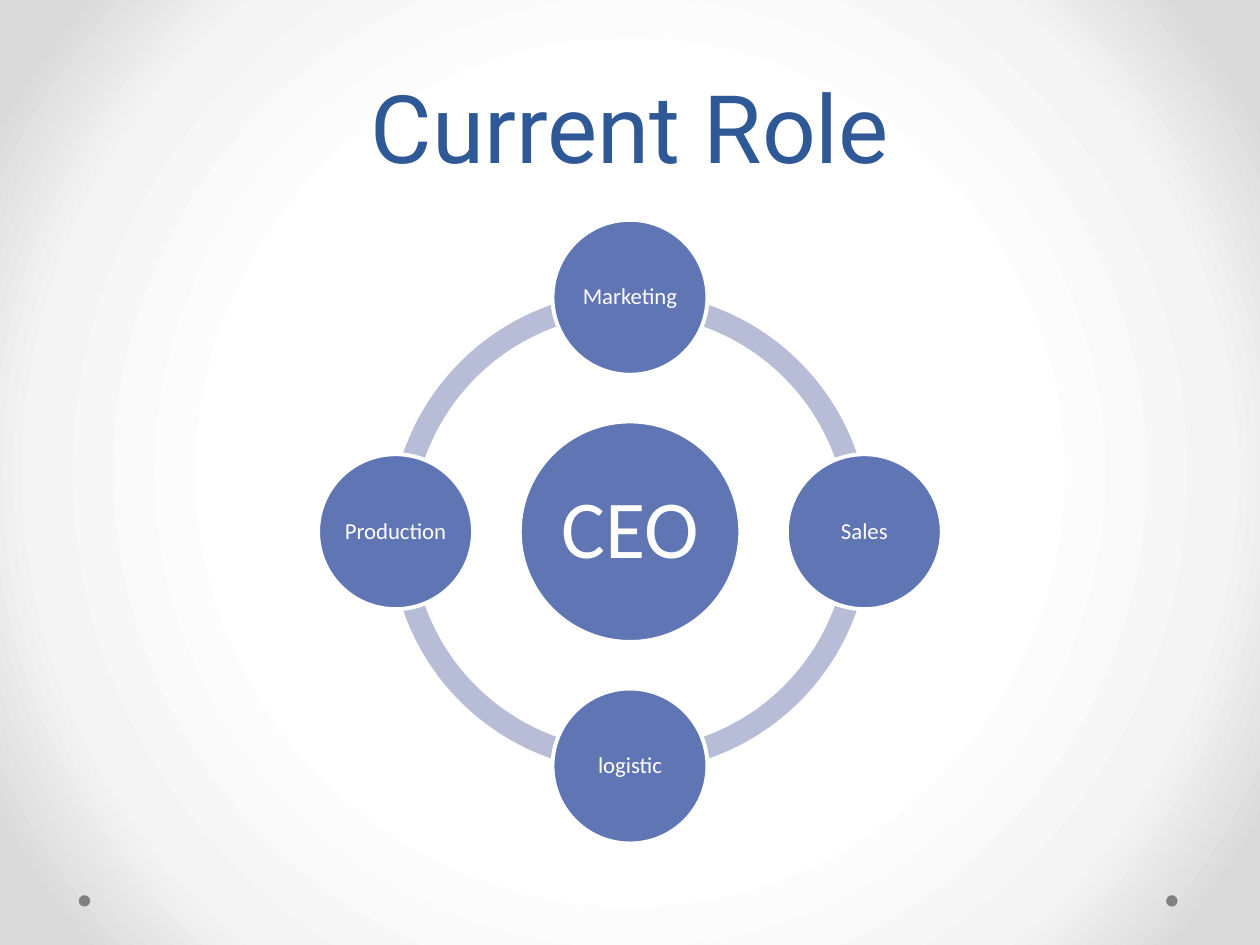
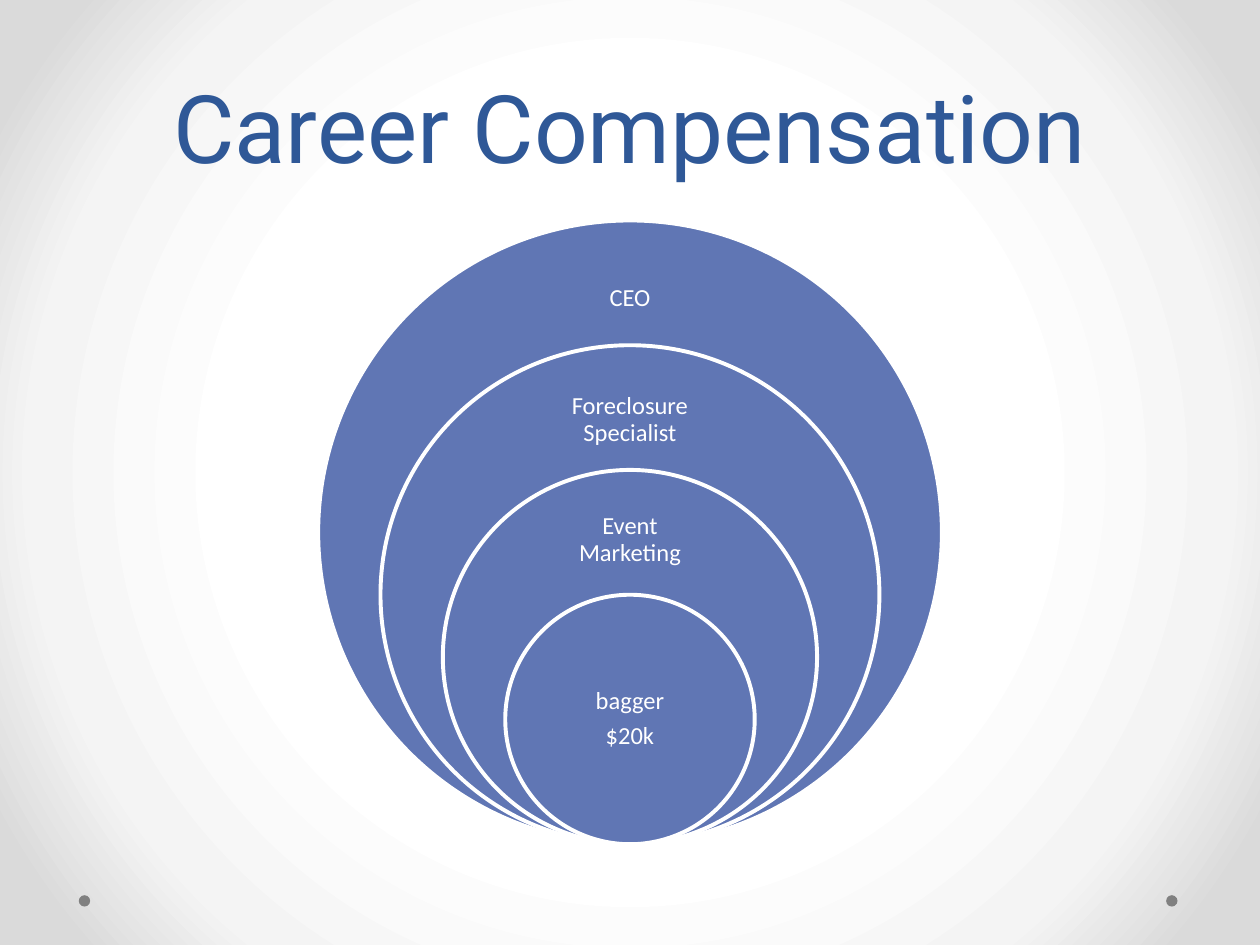
from dataclasses import dataclass
from math import cos, radians, sin

from lxml import etree
from pptx import Presentation
from pptx.dml.color import RGBColor
from pptx.enum.shapes import MSO_SHAPE
from pptx.enum.text import MSO_ANCHOR, PP_ALIGN
from pptx.oxml.ns import qn
from pptx.util import Inches, Pt

ELLIPSE, BLOCK_ARC = MSO_SHAPE.OVAL, MSO_SHAPE.BLOCK_ARC
CENTER = PP_ALIGN.CENTER
MIDDLE, BOTTOM = MSO_ANCHOR.MIDDLE, MSO_ANCHOR.BOTTOM


@dataclass(frozen=True)
class Theme:
    title_color: str = "2F5897"
    circle: str = "6076B4"
    arc: str = "B7BDD6"
    dot: str = "808080"
    white: str = "FFFFFF"
    backdrop: tuple = ((50, "FFFFFF"), (76, "F4F4F4"), (92, "DADADA"))
    title_font: str = "Roboto"
    body_font: str = "Calibri"
    title_size: int = 54
    title_leading: int = 58
    hub_size: int = 47
    role_size: int = 13
    level_size: int = 14
    outline: float = 2.25


THEME = Theme()

# Both diagrams fill the same round area
CENTER_X, CENTER_Y = 5, 4.22
DIAGRAM_SIZE = 4.95
DIAGRAM_BOTTOM = 6.7


def paint_backdrop(slide):
    """Radial gradient from the white middle to grey corners."""
    slide.background.fill.gradient()
    gradient = next(slide.element.iter(qn("a:gradFill")))
    for child in list(gradient):
        gradient.remove(child)
    stops = etree.SubElement(gradient, qn("a:gsLst"))
    for percent, color in THEME.backdrop:
        stop = etree.SubElement(stops, qn("a:gs"), pos=str(percent * 1000))
        etree.SubElement(stop, qn("a:srgbClr"), val=color)
    circle = etree.SubElement(gradient, qn("a:path"), {"path": "circle"})
    etree.SubElement(circle, qn("a:fillToRect"),
                     {side: "50000" for side in "ltrb"})


def add_round(slide, kind, center_x, center_y, size, color, outlined=False):
    """Shape with equal sides, placed by its centre."""
    shape = slide.shapes.add_shape(
        kind, Inches(center_x - size / 2), Inches(center_y - size / 2),
        Inches(size), Inches(size))
    shape.shadow.inherit = False
    shape.fill.solid()
    shape.fill.fore_color.rgb = RGBColor.from_string(color)
    if outlined:
        shape.line.color.rgb = RGBColor.from_string(THEME.white)
        shape.line.width = Pt(THEME.outline)
    else:
        shape.line.fill.background()
    return shape


def add_circle(slide, center_x, center_y, size):
    return add_round(slide, ELLIPSE, center_x, center_y, size,
                     THEME.circle, outlined=True)


def write(shape, text, size, inset):
    """Centred white label; each line of text is a paragraph."""
    frame = shape.text_frame
    frame.word_wrap = True
    frame.vertical_anchor = MIDDLE
    frame.margin_left = frame.margin_right = Inches(inset)
    frame.margin_top = frame.margin_bottom = Inches(inset)
    frame.text = text
    for paragraph in frame.paragraphs:
        paragraph.alignment = CENTER
        paragraph.line_spacing = 0.9
        paragraph.font.name = THEME.body_font
        paragraph.font.size = Pt(size)
        paragraph.font.color.rgb = RGBColor.from_string(THEME.white)
    for paragraph in frame.paragraphs[:-1]:
        paragraph.space_after = Pt(0.35 * size)


def add_title(slide, text):
    box = slide.shapes.add_textbox(Inches(0.5), Inches(0.17),
                                   Inches(9), Inches(1.33))
    frame = box.text_frame
    frame.word_wrap = True
    frame.vertical_anchor = BOTTOM
    frame.text = text
    title = frame.paragraphs[0]
    title.alignment = CENTER
    title.line_spacing = Pt(THEME.title_leading)
    title.font.name = THEME.title_font
    title.font.size = Pt(THEME.title_size)
    title.font.color.rgb = RGBColor.from_string(THEME.title_color)


def new_slide(deck, title):
    """Slide with the shared backdrop, footer dots and title."""
    slide = deck.slides.add_slide(deck.slide_layouts[6])
    paint_backdrop(slide)
    for dot_x in (9.3, 0.67):
        add_round(slide, ELLIPSE, dot_x, 7.15, 0.09, THEME.dot)
    add_title(slide, title)
    return slide


def add_role_wheel(slide, hub, roles):
    """Hub circle with the roles spread clockwise from the top on a ring."""
    step = 360 / len(roles)
    role_size = 1.23
    orbit = (DIAGRAM_SIZE - role_size) / 2
    for index in range(len(roles)):
        arc = add_round(slide, BLOCK_ARC, CENTER_X, CENTER_Y, 3.81, THEME.arc)
        # An arc angle of one degree is 0.6 in adjustment units
        arc.adjustments[0] = index * step * 0.6
        arc.adjustments[1] = (index + 1) * step % 360 * 0.6
        arc.adjustments[2] = 0.046

    write(add_circle(slide, CENTER_X, CENTER_Y, 1.75), hub,
          THEME.hub_size, 0.07)
    for index, role in enumerate(roles):
        angle = radians(index * step - 90)
        circle = add_circle(slide, CENTER_X + orbit * cos(angle),
                            CENTER_Y + orbit * sin(angle), role_size)
        write(circle, role, THEME.role_size, 0.02)


def add_nested_levels(slide, levels, core):
    """Circles sharing a bottom point; levels hold (label, top gap, height)."""
    shrink = DIAGRAM_SIZE / (len(levels) + 2)
    label_width = 1.38
    for index, (label, gap, height) in enumerate(levels):
        size = DIAGRAM_SIZE - index * shrink
        add_circle(slide, CENTER_X, DIAGRAM_BOTTOM - size / 2, size)
        box = slide.shapes.add_textbox(
            Inches(CENTER_X - label_width / 2),
            Inches(DIAGRAM_BOTTOM - size + gap),
            Inches(label_width), Inches(height))
        write(box, label, THEME.level_size, 0.11)

    size = 2 * shrink
    core_circle = add_circle(slide, CENTER_X, DIAGRAM_BOTTOM - size / 2, size)
    write(core_circle, core, THEME.level_size, 0.11)


def main():
    deck = Presentation()
    deck.slide_width, deck.slide_height = Inches(10), Inches(7.5)

    # Current role
    role_slide = new_slide(deck, "Current Role")
    add_role_wheel(role_slide, "CEO",
                   ["Marketing", "Sales", "logistic", "Production"])

    # Career compensation
    career_slide = new_slide(deck, "Career Compensation")
    add_nested_levels(career_slide,
                      [("CEO", 0.25, 0.74),
                       ("Foreclosure Specialist", 0.24, 0.71),
                       ("Event Marketing", 0.22, 0.67)],
                      "bagger\n$20k")

    deck.save("out.pptx")


if __name__ == "__main__":
    main()
